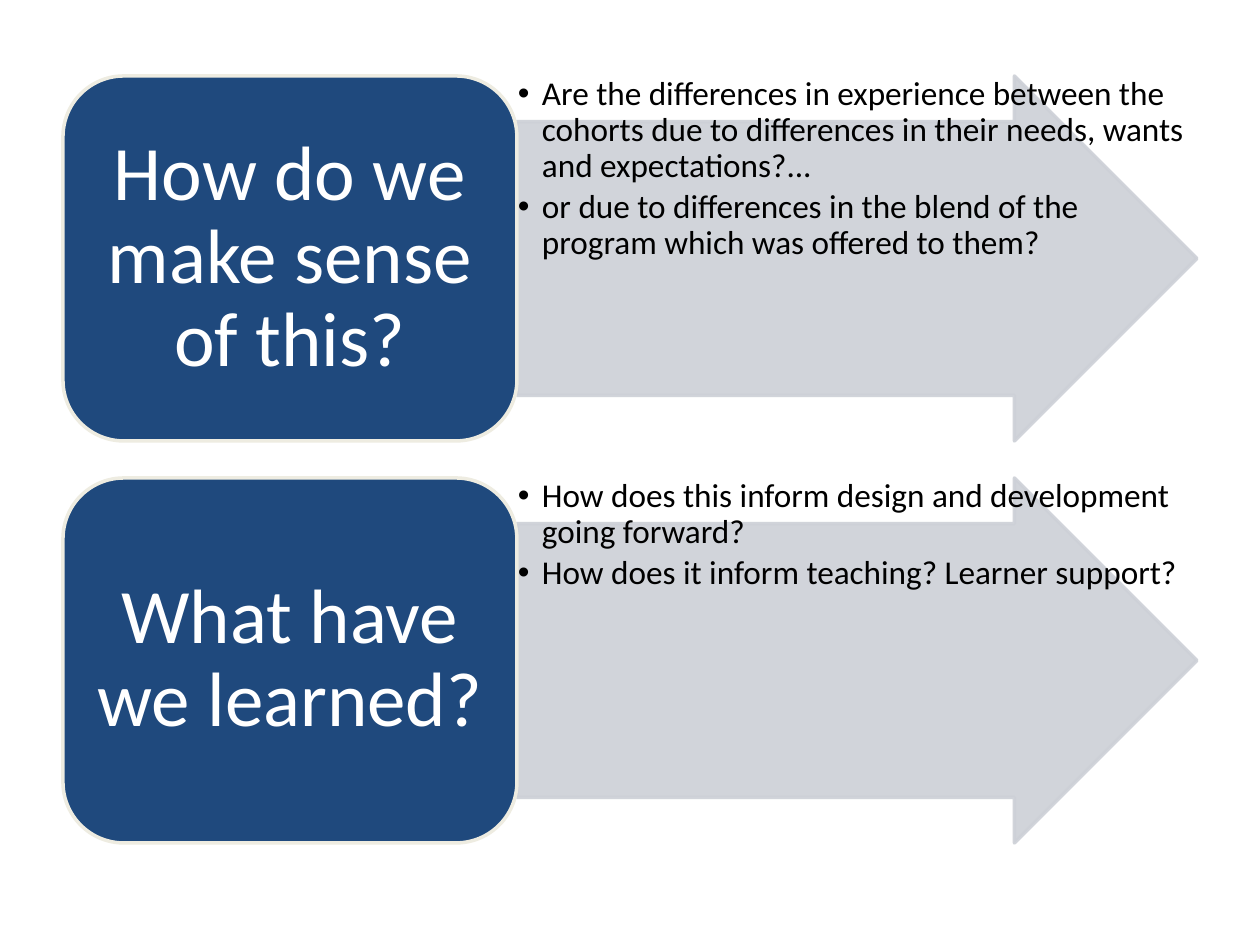
"""Build a slide of two question boxes, each with an arrow of bullet points."""
from lxml import etree
from pptx import Presentation
from pptx import util as u
from pptx.dml.color import RGBColor
from pptx.enum import shapes, text
from pptx.oxml.ns import qn

NAVY = RGBColor(0x1F, 0x49, 0x7D)
CREAM = RGBColor(0xEE, 0xEC, 0xE1)
GREY = RGBColor(0xCD, 0xD0, 0xD7)
WHITE = RGBColor(0xFF, 0xFF, 0xFF)
BLACK = RGBColor(0, 0, 0)

LEFT, TOP, BOX_W, ARROW_W, ROW_H, PITCH = 63, 76, 454, 680, 365, 402
ROWS = [
    ("How do we make sense of this?", [
        "Are the differences in experience between the cohorts due to differences "
        "in their needs, wants and expectations?...",
        "or due to differences in the blend of the program which was offered to them?",
    ]),
    ("What have we learned?", [
        "How does this inform design and development going forward?",
        "How does it inform teaching? Learner support?",
    ]),
]


def px(n):
    return u.Emu(round(n * 914400 / 126))


def add_run(p, words, size, color):
    p.line_spacing = 0.9
    p.space_before = u.Pt(0)
    r = p.add_run()
    r.text = words
    r.font.name = "Calibri"
    r.font.size = u.Pt(size)
    r.font.color.rgb = color


prs = Presentation()
prs.slide_width, prs.slide_height = px(1260), px(945)
s = prs.slides.add_slide(prs.slide_layouts[3])
title, *bodies = s.placeholders
title._element.getparent().remove(title._element)

for i, ((question, points), body) in enumerate(zip(ROWS, bodies)):
    top = TOP + i * PITCH
    arrow_at = px(LEFT + BOX_W), px(top), px(ARROW_W), px(ROW_H)
    box_at = px(LEFT), px(top), px(BOX_W), px(ROW_H)

    arrow = s.shapes.add_shape(shapes.MSO_SHAPE.RIGHT_ARROW, *arrow_at)
    arrow.adjustments[0] = 0.75
    arrow.adjustments[1] = 0.5
    box = s.shapes.add_shape(shapes.MSO_SHAPE.ROUNDED_RECTANGLE, *box_at)
    for sp, fill, line in ((arrow, GREY, GREY), (box, NAVY, CREAM)):
        sp.shadow.inherit = False
        sp.fill.solid()
        sp.fill.fore_color.rgb = fill
        sp.line.color.rgb = line
        sp.line.width = u.Pt(2)
    for clr in arrow._element.spPr.iter(qn("a:srgbClr")):
        etree.SubElement(clr, qn("a:alpha"), val="90000")

    tf = box.text_frame
    tf.word_wrap = True
    tf.vertical_anchor = text.MSO_ANCHOR.MIDDLE
    tf.margin_left = tf.margin_right = px(5)
    p = tf.paragraphs[0]
    p.alignment = text.PP_ALIGN.CENTER
    add_run(p, question, 44, WHITE)

    body.left, body.top, body.width, body.height = arrow_at
    box._element.addnext(body._element)
    tf = body.text_frame
    tf.word_wrap = True
    tf.auto_size = text.MSO_AUTO_SIZE.NONE
    tf.vertical_anchor = text.MSO_ANCHOR.TOP
    tf.margin_left = tf.margin_right = tf.margin_top = tf.margin_bottom = px(1)
    for j, point in enumerate(points):
        p = tf.add_paragraph() if j else tf.paragraphs[0]
        p.space_after = u.Pt(3)
        add_run(p, point, 19, BLACK)
        pPr = p._p.get_or_add_pPr()
        pPr.set("marL", str(px(24)))
        pPr.set("indent", str(-px(24)))
        etree.SubElement(pPr, qn("a:buChar"), char="•")

prs.save("out.pptx")
